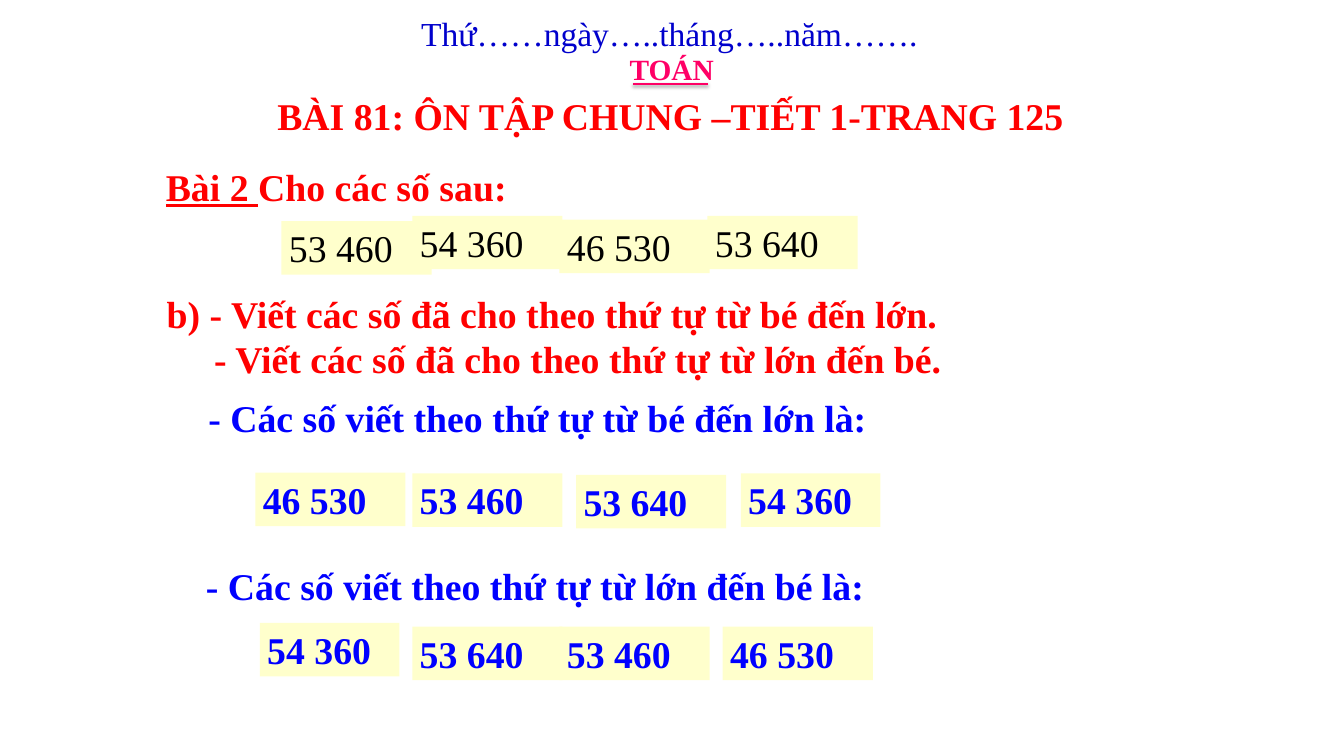
import pptx
import pptx.dml.color
import pptx.enum.shapes
import pptx.enum.text
import pptx.util
from lxml import etree
from pptx.util import Cm, Pt

FONT = "Times New Roman"
RED, BLUE, NAVY, PINK = "FF0000", "0000FF", "0000CC", "FF0066"
BLACK, CREAM = "000000", "FFFFCC"
LINE_HEIGHT = 1.8
TASK_INDENT = 1.59
DRAWING = "http://schemas.openxmlformats.org/drawingml/2006/main"

DATE = "Thứ……ngày…..tháng…..năm……."
SUBJECT = "TOÁN"
TITLE = "BÀI 81: ÔN TẬP CHUNG –TIẾT 1-TRANG 125"
EXERCISE = ("Bài 2 ", "Cho các số sau:")
TASKS = [
    "b) - Viết các số đã cho theo thứ tự từ bé đến lớn.",
    "- Viết các số đã cho theo thứ tự từ lớn đến bé.",
]
ANSWERS = [
    ("- Các số viết theo thứ tự từ bé đến lớn là:", 6.76, 13.16),
    ("- Các số viết theo thứ tự từ lớn đến bé là:", 6.68, 18.82),
]
GIVEN_NUMBERS = [
    ("53 460", 9.47, 7.44, 5.05),
    ("54 360", 13.87, 7.26, 5.05),
    ("46 530", 18.82, 7.39, 5.05),
    ("53 640", 23.8, 7.26, 5.05),
]
SORTED_NUMBERS = [
    ("46 530", 8.59, 15.9, 5.05),
    ("53 460", 13.87, 15.93, 5.05),
    ("53 640", 19.38, 15.98, 5.05),
    ("54 360", 24.92, 15.93, 4.7),
    ("54 360", 8.74, 20.96, 4.7),
    ("53 640", 13.87, 21.08, 5.05),
    ("53 460", 18.82, 21.08, 5.05),
    ("46 530", 24.31, 21.08, 5.05),
]


def color(value):
    return pptx.dml.color.RGBColor.from_string(value)


def style_font(font, size, value, bold):
    font.name = FONT
    font.size = Pt(size)
    font.bold = bold
    font.color.rgb = color(value)


def write(shape, text, value, size=36, bold=True, wrap=True):
    frame = shape.text_frame
    frame.text = text
    frame.word_wrap = wrap
    frame.vertical_anchor = pptx.enum.text.MSO_ANCHOR.TOP
    for paragraph in frame.paragraphs:
        paragraph.alignment = pptx.enum.text.PP_ALIGN.LEFT
        for run in paragraph.runs:
            style_font(run.font, size, value, bold)
    return frame


def add_text(slide, text, left, top, width, value, height=LINE_HEIGHT, **style):
    box = slide.shapes.add_textbox(Cm(left), Cm(top), Cm(width), Cm(height))
    return write(box, text, value, **style)


def add_number(slide, text, left, top, width, value, bold):
    card = slide.shapes.add_shape(
        pptx.enum.shapes.MSO_SHAPE.RECTANGLE,
        Cm(left), Cm(top), Cm(width), Cm(LINE_HEIGHT),
    )
    card.shadow.inherit = False
    card.fill.solid()
    card.fill.fore_color.rgb = color(CREAM)
    card.line.fill.background()
    write(card, text, value, bold=bold)


def add_subject_rule(slide):
    rule = slide.shapes.add_connector(
        pptx.enum.shapes.MSO_CONNECTOR.STRAIGHT,
        Cm(21.29), Cm(2.84), Cm(23.83), Cm(2.84),
    )
    rule.line.color.rgb = color(PINK)
    rule.line.width = Pt(2)
    rule._element.spPr.append(etree.fromstring(
        f'<a:effectLst xmlns:a="{DRAWING}">'
        f'<a:outerShdw blurRad="{Pt(3.1)}" dist="{Pt(1.6)}" dir="5400000" rotWithShape="0">'
        f'<a:srgbClr val="{BLACK}"><a:alpha val="38000"/></a:srgbClr>'
        '</a:outerShdw></a:effectLst>'
    ))


def main():
    presentation = pptx.Presentation()
    presentation.slide_width = Cm(45.21)
    presentation.slide_height = Cm(25.4)
    slide = presentation.slides.add_slide(presentation.slide_layouts[6])

    add_text(slide, DATE, 13.92, 0.3, 17.37, NAVY, height=1.63, size=32, bold=False, wrap=False)
    add_text(slide, SUBJECT, 20.93, 1.6, 3.38, PINK, height=1.45, size=28, wrap=False)
    add_subject_rule(slide)

    label, prompt = EXERCISE
    exercise = add_text(slide, label, 5.33, 5.38, 17.3, RED).paragraphs[0]
    exercise.runs[0].font.underline = True
    run = exercise.add_run()
    run.text = prompt
    style_font(run.font, 36, RED, True)

    for number in GIVEN_NUMBERS:
        add_number(slide, *number, BLACK, False)

    title = add_text(slide, TITLE, 1.6, 3, 41.91, RED)
    title.paragraphs[0].alignment = pptx.enum.text.PP_ALIGN.CENTER

    tasks = add_text(slide, "\n".join(TASKS), 5.36, 9.65, 32.18, RED, height=3.33)
    tasks.paragraphs[1]._p.get_or_add_pPr().set("marL", str(Cm(TASK_INDENT)))

    for text, left, top in ANSWERS:
        add_text(slide, text, left, top, 29.21, BLUE)
    for number in SORTED_NUMBERS:
        add_number(slide, *number, BLUE, True)

    presentation.save("out.pptx")


if __name__ == "__main__":
    main()
